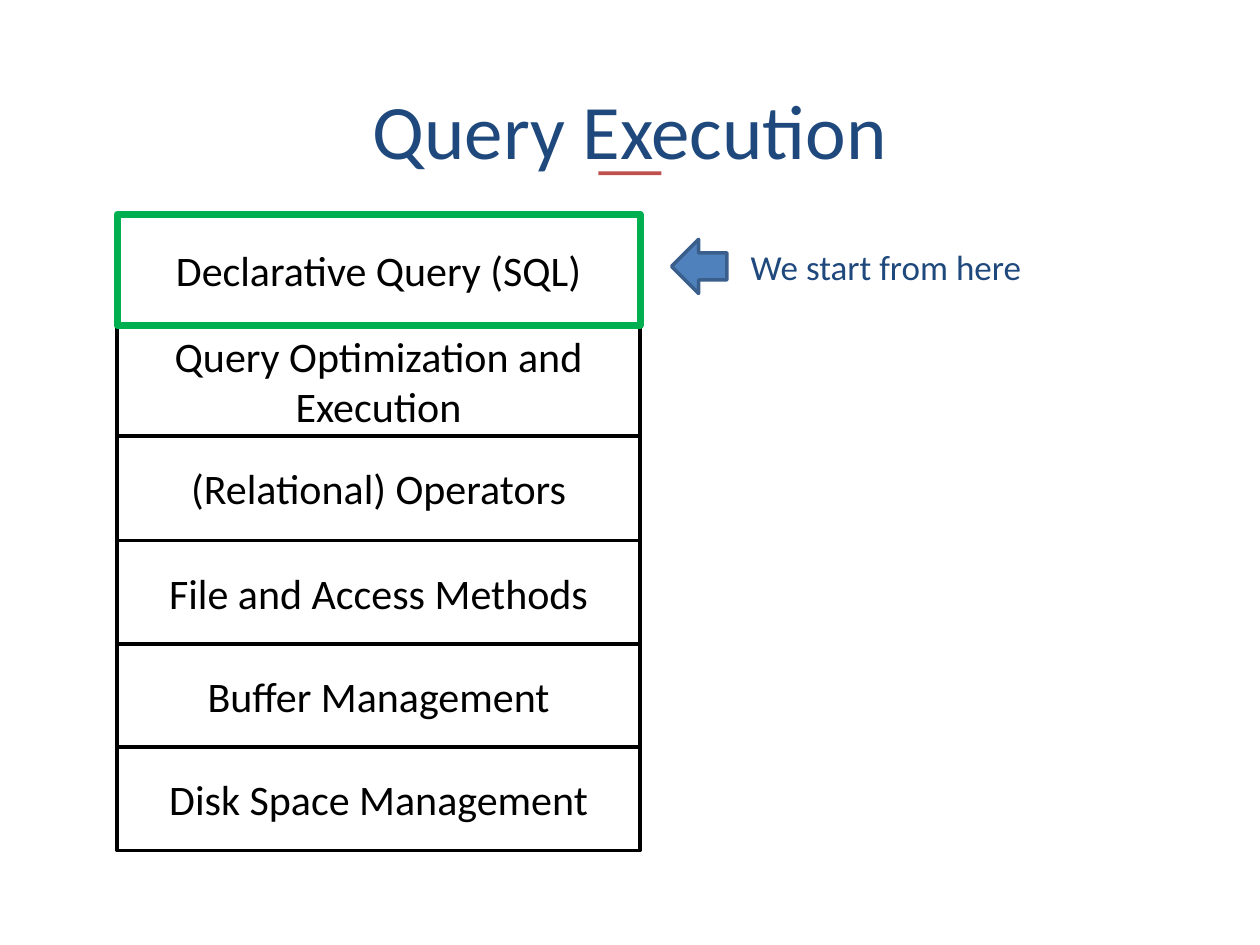
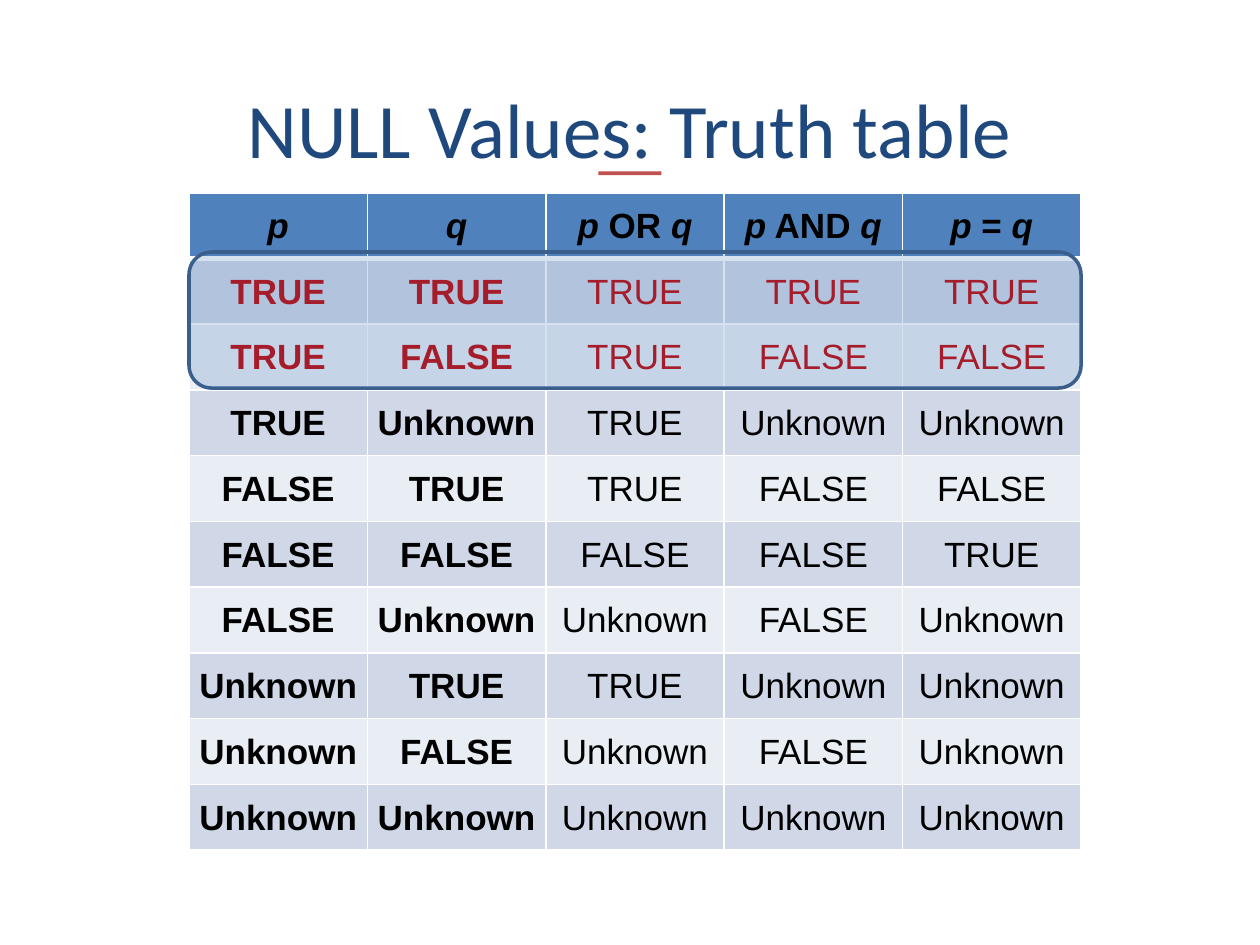
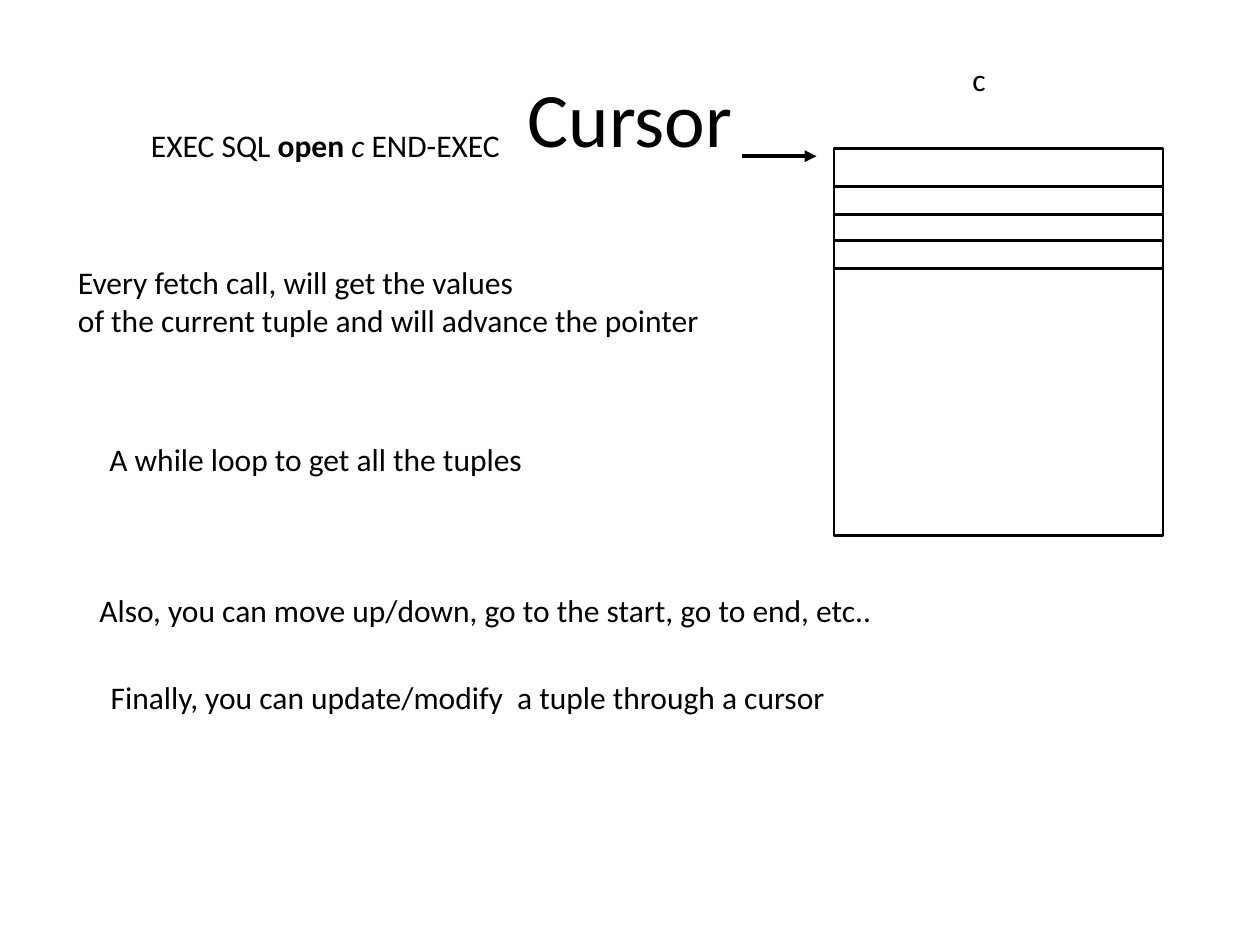
from itertools import product

from lxml.etree import SubElement
from pptx import Presentation
from pptx.dml.color import RGBColor
from pptx.enum.shapes import MSO_CONNECTOR, MSO_SHAPE
from pptx.enum.text import MSO_ANCHOR, PP_ALIGN
from pptx.oxml.ns import qn
from pptx.util import Inches, Pt

BLACK, WHITE, NAVY, RED = "000000", "FFFFFF", "1F497D", "C00000"
BLUE, BLUE_EDGE, ACCENT, GREEN = "4F81BD", "3A5F8C", "C0504D", "00B050"
BANDS = ["E9EDF4", "D0D8E8"]
FONT, TABLE_FONT = "Calibri", "Arial"
TITLE_ONLY = 5


def rgb(color):
    return RGBColor.from_string(color)


def inches(*lengths):
    return [Inches(n) for n in lengths]


# Shared parts
def add_run(p, text, size, color=BLACK, font=FONT, bold=False, italic=False):
    r = p.add_run()
    r.text = text
    r.font.size, r.font.name = Pt(size), font
    r.font.bold, r.font.italic = bold, italic
    r.font.color.rgb = rgb(color)


def add_title(slide, text, box, color=NAVY, rule=True):
    title = slide.shapes.title
    title.left, title.top, title.width, title.height = inches(*box)
    tf = title.text_frame
    tf.vertical_anchor = MSO_ANCHOR.MIDDLE
    tf.paragraphs[0].alignment = PP_ALIGN.CENTER
    add_run(tf.paragraphs[0], text, 44, color)
    if rule:
        add_box(slide, (4.75, 1.36, 0.5, 0.03), fill=ACCENT)


def add_box(slide, box, fill=None, line=None, width=2, kind=MSO_SHAPE.RECTANGLE):
    sp = slide.shapes.add_shape(kind, *inches(*box))
    sp.shadow.inherit = False
    if fill:
        sp.fill.solid()
        sp.fill.fore_color.rgb = rgb(fill)
    else:
        sp.fill.background()
    if line:
        sp.line.color.rgb = rgb(line)
        sp.line.width = Pt(width)
    else:
        sp.line.fill.background()
    return sp


def add_text(slide, box, *lines, size=18, color=BLACK):
    """Each line is a list of (text, style) runs."""
    tf = slide.shapes.add_textbox(*inches(*box)).text_frame
    tf.word_wrap = False
    for i, runs in enumerate(lines):
        p = tf.add_paragraph() if i else tf.paragraphs[0]
        for text, style in runs:
            add_run(p, text, size, color, **style)


def add_line(slide, x1, y1, x2, y2, width, arrow=False):
    line = slide.shapes.add_connector(MSO_CONNECTOR.STRAIGHT, *inches(x1, y1, x2, y2))
    line.line.color.rgb = rgb(BLACK)
    line.line.width = Pt(width)
    if arrow:
        SubElement(line.line._get_or_add_ln(), qn("a:tailEnd"), type="triangle")
    SubElement(line._element.spPr, qn("a:effectLst"))


# Slide 1: layers of the database system
def add_layers(slide, left, top, width):
    layers = [("Declarative Query (SQL)", 0.88),
              ("Query Optimization and Execution", 0.88),
              ("(Relational) Operators", 0.83),
              ("File and Access Methods", 0.82),
              ("Buffer Management", 0.82),
              ("Disk Space Management", 0.82)]
    y = top + sum(height for _, height in layers)
    # From the bottom up, so that the marked first layer lies on top
    for name, height in reversed(layers):
        y -= height
        marked = name == layers[0][0]
        sp = add_box(slide, (left, y, width, height), WHITE,
                     GREEN if marked else BLACK, 4 if marked else 2)
        tf = sp.text_frame
        tf.word_wrap = True
        tf.vertical_anchor = MSO_ANCHOR.MIDDLE
        tf.paragraphs[0].alignment = PP_ALIGN.CENTER
        add_run(tf.paragraphs[0], name, 24)


def execution_slide(slide):
    add_title(slide, "Query Execution", (0.5, 0.6, 9, 0.84))
    add_layers(slide, 0.93, 1.7, 4.15)
    add_text(slide, (5.86, 1.9, 2.35, 0.44), [("We start from here", {})],
             size=20, color=NAVY)
    add_box(slide, (5.33, 1.9, 0.44, 0.43), BLUE, BLUE_EDGE, kind=MSO_SHAPE.LEFT_ARROW)


# Slide 2: three-valued logic
def truth_rows():
    values = ["TRUE", "FALSE", "Unknown"]
    rank = ["FALSE", "Unknown", "TRUE"].index
    for p, q in product(values, values):
        if "Unknown" in (p, q):
            equal = "Unknown"
        else:
            equal = "TRUE" if p == q else "FALSE"
        yield [p, q, max(p, q, key=rank), min(p, q, key=rank), equal]


def set_borders(cell, bottom):
    tc_pr = cell._tc.get_or_add_tcPr()
    for i, (side, width) in enumerate([("L", 1), ("R", 1), ("T", 1), ("B", bottom)]):
        ln = tc_pr.makeelement(qn(f"a:ln{side}"), {"w": str(Pt(width))})
        SubElement(SubElement(ln, qn("a:solidFill")), qn("a:srgbClr"), val=WHITE)
        tc_pr.insert(i, ln)


def add_truth_table(slide, left, top, width, height):
    header = [["p"], ["q"], ["p", " OR ", "q"], ["p", " AND ", "q"], ["p", " = ", "q"]]
    rows = [header] + [[[value] for value in row] for row in truth_rows()]
    table = slide.shapes.add_table(len(rows), len(header),
                                   *inches(left, top, width, height)).table
    for i, row in enumerate(rows):
        table.rows[i].height = Inches(height / len(rows))
        for j, parts in enumerate(row):
            cell = table.cell(i, j)
            cell.fill.solid()
            cell.fill.fore_color.rgb = rgb(BANDS[i % 2] if i else BLUE)
            set_borders(cell, 1 if i else 3)
            cell.vertical_anchor = MSO_ANCHOR.MIDDLE
            cell.margin_left = cell.margin_right = cell.margin_top = Inches(0.01)
            cell.margin_bottom = 0
            p = cell.text_frame.paragraphs[0]
            p.alignment = PP_ALIGN.CENTER
            for part in parts:
                add_run(p, part, 20, RED if i in (1, 2) else BLACK, TABLE_FONT,
                        bold=i == 0 or j < 2, italic=i == 0 and part in "pq")


def truth_slide(slide):
    add_title(slide, "NULL Values: Truth table", (0.5, 0.73, 9, 0.57))
    add_truth_table(slide, 1.5, 1.53, 7.08, 5.22)
    # Translucent highlight over the first two rows
    sp = add_box(slide, (1.5, 2, 7.08, 1.08), BLUE, BLUE_EDGE,
                 kind=MSO_SHAPE.ROUNDED_RECTANGLE)
    color = sp._element.spPr.find(qn("a:solidFill")).find(qn("a:srgbClr"))
    SubElement(color, qn("a:alpha"), val="23000")


# Slide 3: cursor over a result set
def add_result_set(slide, left, top, width, height):
    add_box(slide, (left, top, width, height), line=BLACK, width=1.5)
    for offset in (0.3, 0.52, 0.73, 0.95):
        add_line(slide, left, top + offset, left + width, top + offset, 1.5)
    add_text(slide, (left + 1, top - 0.75, 0.33, 0.4), [("c", {})])
    add_line(slide, left - 0.73, top + 0.06, left - 0.14, top + 0.06, 2.25, arrow=True)


def cursor_slide(slide):
    add_title(slide, "Cursor", (0.5, 0.3, 9, 1.25), BLACK, rule=False)
    add_result_set(slide, 6.62, 1.18, 2.61, 3.07)
    add_text(slide, (1.1, 0.95, 3.67, 0.4),
             [("EXEC SQL ", {}), ("open ", {"bold": True}),
              ("c ", {"italic": True}), ("END-EXEC", {})])
    add_text(slide, (0.52, 2.04, 5.45, 0.7),
             [("Every fetch call, will get the values", {})],
             [("of the current tuple and will advance the pointer", {})])
    remarks = [
        ((0.77, 3.44, 3.71, 0.4), "A while loop to get all the tuples"),
        ((0.69, 4.64, 6.92, 0.4),
         "Also, you can move up/down, go to the start, go to end, etc.."),
        ((0.78, 5.33, 6.34, 0.4),
         "Finally, you can update/modify  a tuple through a cursor"),
    ]
    for box, text in remarks:
        add_text(slide, box, [(text, {})])


def main():
    prs = Presentation()
    prs.slide_width, prs.slide_height = inches(10, 7.5)
    for build in (execution_slide, truth_slide, cursor_slide):
        build(prs.slides.add_slide(prs.slide_layouts[TITLE_ONLY]))
    prs.save("out.pptx")


if __name__ == "__main__":
    main()
